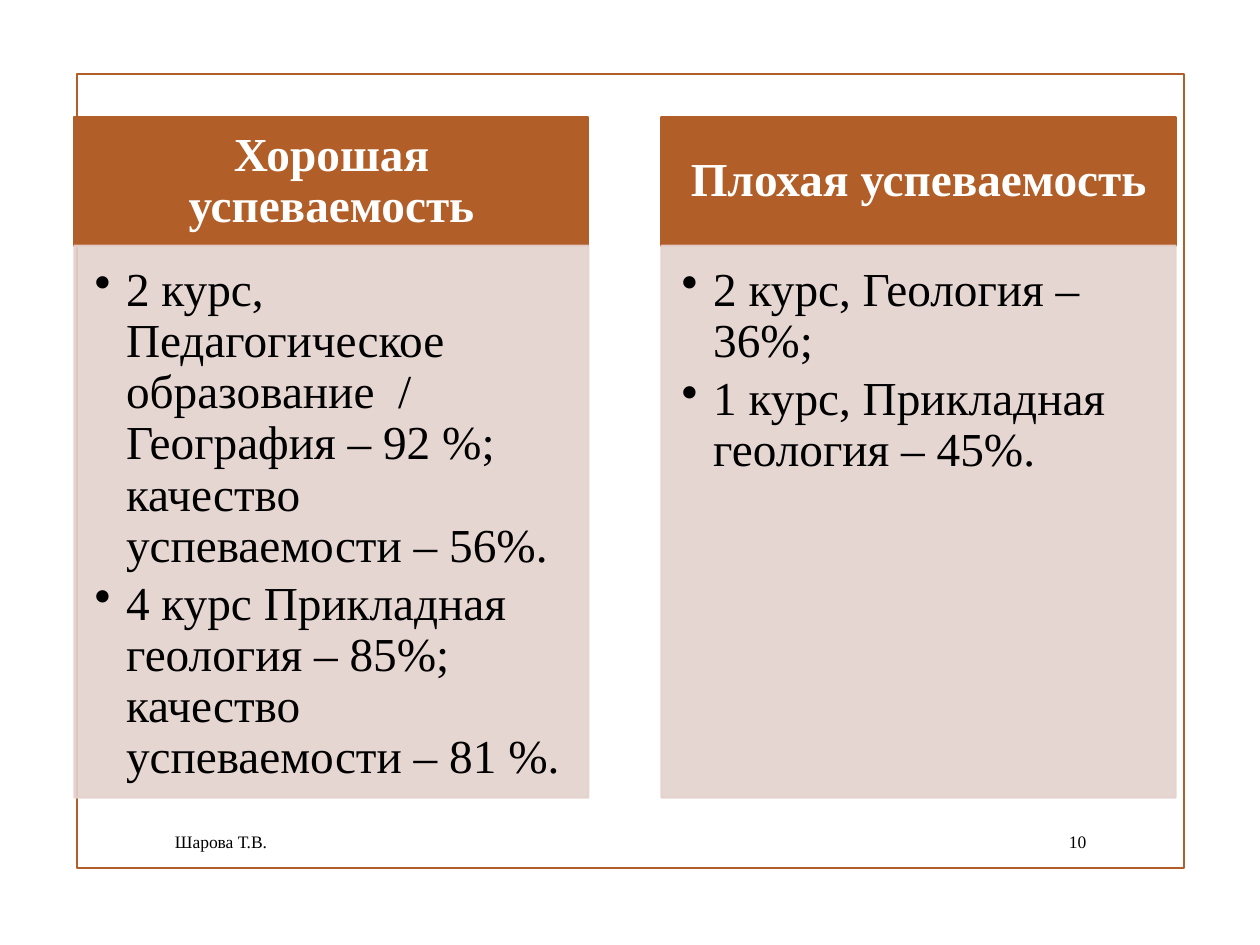
from dataclasses import dataclass

from lxml import etree
from pptx import Presentation
from pptx.dml.color import RGBColor
from pptx.enum import shapes, text
from pptx.oxml import ns
from pptx.util import Inches, Pt

COLORS = {
    "accent": "B15E28",
    "panel": "E4D2CD",
    "light": "FFFFFF",
    "dark": "000000",
}
FONT = "Times New Roman"
COLUMN_LEFT = 0.59
COLUMN_STEP = 4.66
COLUMN_WIDTH = 4.08
HEADER_TOP = 0.93
HEADER_HEIGHT = 1.02
BODY_HEIGHT = 4.38
TEXT_SIZE = 27


@dataclass(frozen=True)
class Box:
    left: float
    top: float
    width: float
    height: float

    def lengths(self) -> list:
        return [Inches(n) for n in (self.left, self.top, self.width, self.height)]


@dataclass(frozen=True)
class Column:
    heading: str
    items: tuple[str, ...]


@dataclass(frozen=True)
class Footer:
    content: str
    box: Box
    alignment: text.PP_ALIGN


COLUMNS = (
    Column(
        "Хорошая успеваемость",
        (
            "2 курс, Педагогическое образование  / География – 92 %; "
            "качество успеваемости – 56%.",
            "4 курс Прикладная геология – 85%; качество успеваемости – 81 %.",
        ),
    ),
    Column(
        "Плохая успеваемость",
        ("2 курс, Геология – 36%;", "1 курс, Прикладная геология – 45%."),
    ),
)
FOOTERS = (
    Footer("Шарова Т.В.", Box(1.29, 6.52, 5.58, 0.31), text.PP_ALIGN.LEFT),
    Footer("10", Box(8.29, 6.52, 0.43, 0.31), text.PP_ALIGN.RIGHT),
)


def color(name: str) -> RGBColor:
    return RGBColor.from_string(COLORS[name])


def add_rectangle(slide, box: Box, line: str, fill: str | None = None, opacity: int = 100):
    shape = slide.shapes.add_shape(shapes.MSO_SHAPE.RECTANGLE, *box.lengths())
    shape.shadow.inherit = False
    shape.line.color.rgb = color(line)
    shape.line.width = Pt(1.25)
    if fill is None:
        shape.fill.background()
    else:
        shape.fill.solid()
        shape.fill.fore_color.rgb = color(fill)
    if opacity < 100:
        for element in shape._element.spPr.iter(ns.qn("a:srgbClr")):
            etree.SubElement(element, ns.qn("a:alpha")).set("val", str(opacity * 1000))
    return shape


def set_frame(shape, anchor: text.MSO_ANCHOR, insets: tuple[float, ...]):
    frame = shape.text_frame
    frame.word_wrap = True
    frame.vertical_anchor = anchor
    frame.margin_left, frame.margin_top, frame.margin_right, frame.margin_bottom = (
        Inches(inset) for inset in insets
    )
    return frame


def add_run(paragraph, content: str, size: float, font_color: str, bold: bool = False) -> None:
    run = paragraph.add_run()
    run.text = content
    run.font.name = FONT
    run.font.size = Pt(size)
    run.font.bold = bold
    run.font.color.rgb = color(font_color)


def set_bullet(paragraph) -> None:
    properties = paragraph._p.get_or_add_pPr()
    properties.set("marL", str(Inches(0.25)))
    properties.set("indent", str(Inches(-0.25)))
    etree.SubElement(properties, ns.qn("a:buChar")).set("char", "•")


def draw_column(slide, column: Column, left: float) -> None:
    header = add_rectangle(
        slide, Box(left, HEADER_TOP, COLUMN_WIDTH, HEADER_HEIGHT), "accent", "accent"
    )
    frame = set_frame(header, text.MSO_ANCHOR.MIDDLE, (0.21, 0.12, 0.21, 0.12))
    paragraph = frame.paragraphs[0]
    paragraph.alignment = text.PP_ALIGN.CENTER
    paragraph.line_spacing = 0.9
    add_run(paragraph, column.heading, TEXT_SIZE, "light", bold=True)

    body = add_rectangle(
        slide,
        Box(left, HEADER_TOP + HEADER_HEIGHT, COLUMN_WIDTH, BODY_HEIGHT),
        "panel",
        "panel",
        opacity=90,
    )
    frame = set_frame(body, text.MSO_ANCHOR.TOP, (0.16, 0.16, 0.21, 0.24))
    for index, item in enumerate(column.items):
        paragraph = frame.add_paragraph() if index else frame.paragraphs[0]
        set_bullet(paragraph)
        paragraph.alignment = text.PP_ALIGN.LEFT
        paragraph.line_spacing = 0.9
        paragraph.space_after = Pt(4)
        add_run(paragraph, item, TEXT_SIZE, "dark")


def draw_footer(slide, footer: Footer) -> None:
    shape = slide.shapes.add_textbox(*footer.box.lengths())
    frame = set_frame(shape, text.MSO_ANCHOR.MIDDLE, (0.1, 0.05, 0.1, 0.05))
    paragraph = frame.paragraphs[0]
    paragraph.alignment = footer.alignment
    add_run(paragraph, footer.content, 10, "dark")


def main() -> None:
    presentation = Presentation()
    presentation.slide_width = Inches(10)
    presentation.slide_height = Inches(7.5)
    slide = presentation.slides.add_slide(presentation.slide_layouts[6])
    add_rectangle(slide, Box(0.61, 0.59, 8.79, 6.3), "accent")
    for index, column in enumerate(COLUMNS):
        draw_column(slide, column, COLUMN_LEFT + index * COLUMN_STEP)
    for footer in FOOTERS:
        draw_footer(slide, footer)
    presentation.save("out.pptx")


if __name__ == "__main__":
    main()
